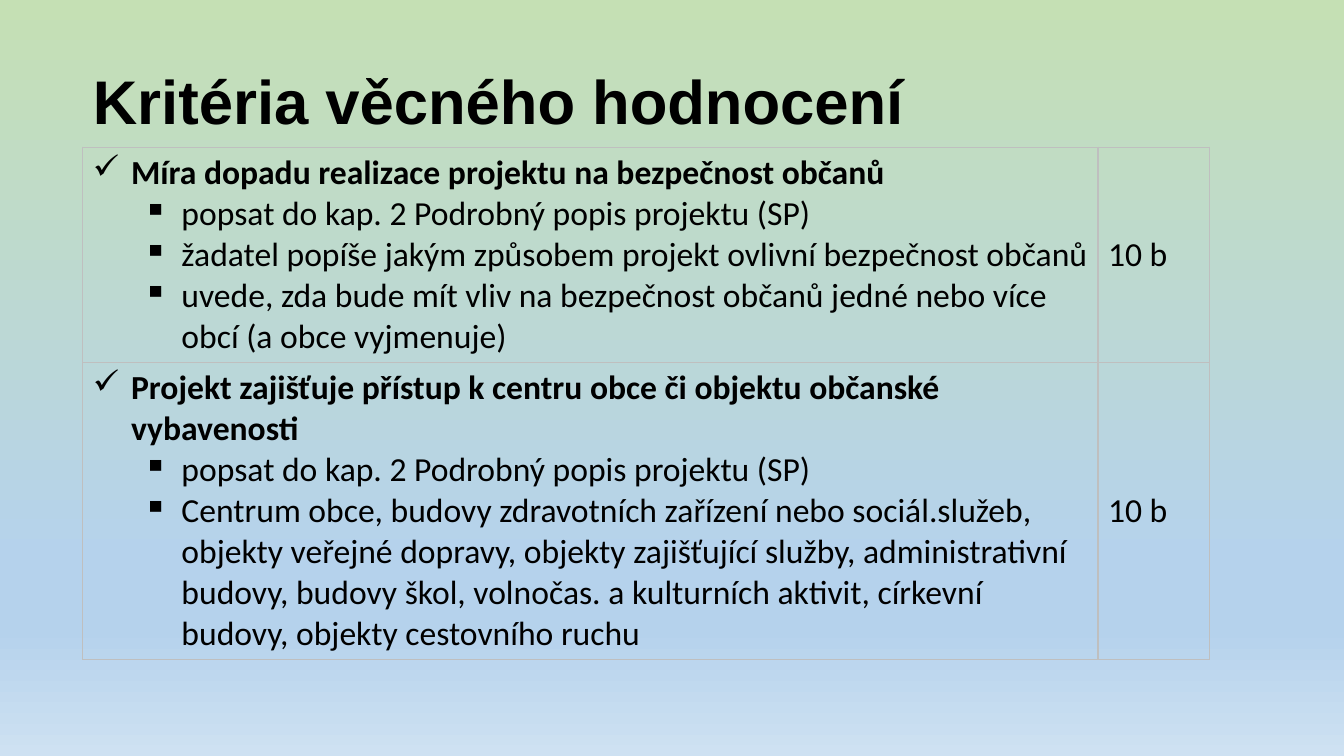
from lxml.etree import SubElement
from pptx import Presentation
from pptx.dml.color import RGBColor
from pptx.enum.text import MSO_ANCHOR, PP_ALIGN
from pptx.oxml.ns import qn
from pptx.util import Inches, Pt

# Content
TITLE = "Kritéria věcného hodnocení"
CRITERIA = [
    ("Míra dopadu realizace projektu na bezpečnost občanů",
     ["popsat do kap. 2 Podrobný popis projektu (SP)",
      "žadatel popíše jakým způsobem projekt ovlivní bezpečnost občanů",
      "uvede, zda bude mít vliv na bezpečnost občanů jedné nebo více obcí "
      "(a obce vyjmenuje)"],
     "10 b"),
    ("Projekt zajišťuje přístup k centru obce či objektu občanské vybavenosti",
     ["popsat do kap. 2 Podrobný popis projektu (SP)",
      "Centrum obce, budovy zdravotních zařízení nebo sociál.služeb, objekty "
      "veřejné dopravy, objekty zajišťující služby, administrativní budovy, "
      "budovy škol, volnočas. a kulturních aktivit, církevní budovy, objekty "
      "cestovního ruchu"],
     "10 b"),
]

# Look
BLACK = RGBColor(0x00, 0x00, 0x00)
BORDER = RGBColor(0xBF, 0xBF, 0xBF)
GREEN = RGBColor(0xC5, 0xE0, 0xB4)
BLUE = RGBColor(0xB5, 0xD2, 0xEC)
PALE_BLUE = RGBColor(0xCE, 0xE1, 0xF2)
GRADIENT = [(0, GREEN), (74, BLUE), (83, BLUE), (100, PALE_BLUE)]
COLUMN_WIDTHS = [10.07, 1.11]
ROW_HEIGHTS = [2.13, 2.95]
HANGING = 0.38


def add_color(parent, color):
    SubElement(parent, qn("a:srgbClr"), val=str(color))


def paint_background(page):
    fill = page.background.fill
    fill.gradient()
    fill.gradient_angle = 270
    stops = page.background._cSld.find(".//" + qn("a:gsLst"))
    for stop in list(stops):
        stops.remove(stop)
    for percent, color in GRADIENT:
        add_color(SubElement(stops, qn("a:gs"), pos=str(percent * 1000)), color)


def add_text(para, text, size, font, bold=False):
    span = para.add_run()
    span.text = text
    span.font.size = Pt(size)
    span.font.name = font
    span.font.bold = bold
    span.font.color.rgb = BLACK


def add_bullet(para, symbol, left):
    props = para._p.get_or_add_pPr()
    props.set("marL", str(Inches(left)))
    props.set("indent", str(-Inches(HANGING)))
    SubElement(props, qn("a:buChar"), char=symbol)


def style_cell(cell):
    props = cell._tc.get_or_add_tcPr()
    for side in ("lnL", "lnR", "lnT", "lnB"):
        line = SubElement(props, qn("a:" + side), w=str(Pt(1)))
        add_color(SubElement(line, qn("a:solidFill")), BORDER)
    cell.fill.background()
    cell.vertical_anchor = MSO_ANCHOR.MIDDLE


def fill_criterion(cell, heading, points):
    frame = cell.text_frame
    para = frame.paragraphs[0]
    add_bullet(para, "✓", HANGING)
    add_text(para, heading, 24, "Calibri", bold=True)
    for point in points:
        para = frame.add_paragraph()
        para.level = 1
        add_bullet(para, "▪", HANGING + 0.5)
        add_text(para, point, 24, "Calibri")


def main():
    deck = Presentation()
    deck.slide_width, deck.slide_height = Inches(13.33), Inches(7.5)
    page = deck.slides.add_slide(deck.slide_layouts[5])
    paint_background(page)

    # Title
    title = page.shapes.title
    title.left, title.top = Inches(0.82), Inches(0.31)
    title.width, title.height = Inches(11.5), Inches(1.45)
    title.text_frame.vertical_anchor = MSO_ANCHOR.MIDDLE
    para = title.text_frame.paragraphs[0]
    para.alignment = PP_ALIGN.LEFT
    para.line_spacing = 0.9
    add_text(para, TITLE, 44, "Arial", bold=True)

    # Criteria table
    table = page.shapes.add_table(
        len(CRITERIA), len(COLUMN_WIDTHS), Inches(0.82), Inches(1.46),
        Inches(sum(COLUMN_WIDTHS)), Inches(sum(ROW_HEIGHTS))).table
    table.first_row = table.horz_banding = False
    for column, width in zip(table.columns, COLUMN_WIDTHS):
        column.width = Inches(width)
    for row, height, (heading, points, score) in zip(
            table.rows, ROW_HEIGHTS, CRITERIA):
        row.height = Inches(height)
        for cell in row.cells:
            style_cell(cell)
        criterion_cell, score_cell = row.cells
        fill_criterion(criterion_cell, heading, points)
        add_text(score_cell.text_frame.paragraphs[0], score, 24, "Calibri")

    deck.save("out.pptx")


if __name__ == "__main__":
    main()
